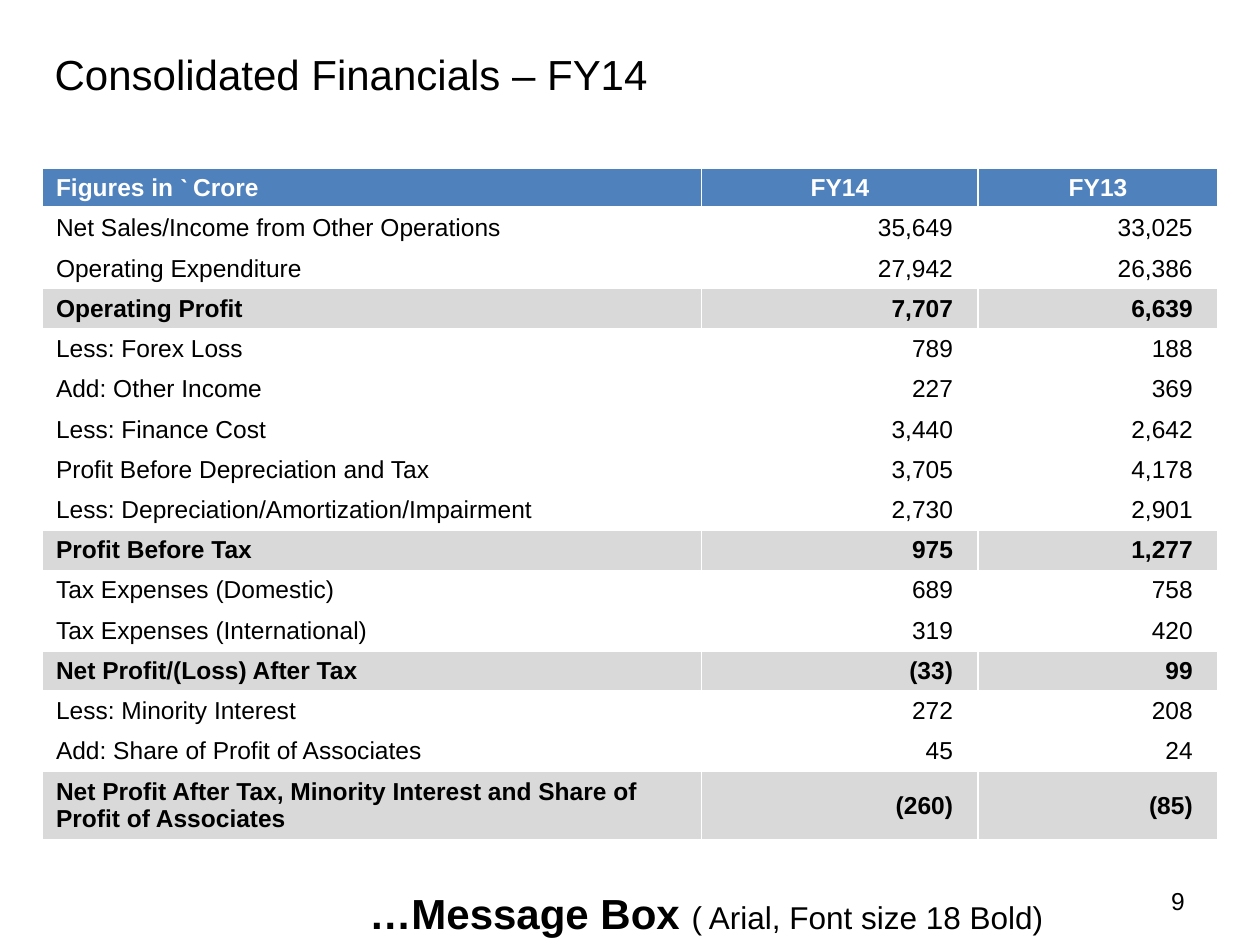
from dataclasses import dataclass
from pptx import Presentation
from pptx.dml.color import RGBColor
from pptx.enum.text import MSO_ANCHOR, PP_ALIGN
from pptx.oxml import parse_xml
from pptx.oxml.ns import nsdecls
from pptx.util import Pt

BLACK = "000000"
WHITE = "FFFFFF"
HEADER_BLUE = "4F81BD"
TOTAL_GREY = "D9D9D9"
COLUMN_WIDTHS = (377, 158, 137)
ROW_HEIGHT = 23
LAST_ROW_HEIGHT = 39


@dataclass
class Span:
    text: str
    size: float
    bold: bool = False
    font: str = "Arial"


@dataclass
class Line:
    label: str
    current: str
    previous: str
    total: bool = False


LINES = [
    Line("Net Sales/Income from Other Operations", "35,649", "33,025"),
    Line("Operating Expenditure", "27,942", "26,386"),
    Line("Operating Profit", "7,707", "6,639", True),
    Line("Less: Forex Loss", "789", "188"),
    Line("Add: Other Income", "227", "369"),
    Line("Less: Finance Cost", "3,440", "2,642"),
    Line("Profit Before Depreciation and Tax", "3,705", "4,178"),
    Line("Less: Depreciation/Amortization/Impairment", "2,730", "2,901"),
    Line("Profit Before Tax", "975", "1,277", True),
    Line("Tax Expenses (Domestic)", "689", "758"),
    Line("Tax Expenses (International)", "319", "420"),
    Line("Net Profit/(Loss) After Tax", "(33)", "99", True),
    Line("Less: Minority Interest", "272", "208"),
    Line("Add: Share of Profit of Associates", "45", "24"),
    Line("Net Profit After Tax, Minority Interest and Share of Profit of Associates",
         "(260)", "(85)", True),
]


def color(value: str) -> RGBColor:
    return RGBColor.from_string(value)


def style_font(font, span: Span, hue: str) -> None:
    font.name = span.font
    font.size = Pt(span.size)
    font.bold = span.bold
    font.color.rgb = color(hue)


def write(frame, spans: list[Span], hue: str = BLACK, align=PP_ALIGN.LEFT) -> None:
    para = frame.paragraphs[0]
    para.alignment = align
    for span in spans:
        run = para.add_run()
        run.text = span.text
        if len(spans) > 1:
            style_font(run.font, span, hue)
    if len(spans) == 1:
        style_font(para.font, spans[0], hue)


def add_text(page, left: float, top: float, width: float, height: float,
             spans: list[Span], align=PP_ALIGN.LEFT, anchor=MSO_ANCHOR.TOP) -> None:
    box = page.shapes.add_textbox(Pt(left), Pt(top), Pt(width), Pt(height))
    box.text_frame.word_wrap = True
    box.text_frame.vertical_anchor = anchor
    write(box.text_frame, spans, align=align)


def set_borders(cell, bottom: float) -> None:
    properties = cell._tc.get_or_add_tcPr()
    widths = {"lnL": 1, "lnR": 1, "lnT": 1, "lnB": bottom}
    for index, (side, width) in enumerate(widths.items()):
        properties.insert(index, parse_xml(
            f'<a:{side} {nsdecls("a")} w="{Pt(width)}"><a:solidFill>'
            f'<a:srgbClr val="{WHITE}"/></a:solidFill></a:{side}>'))


def fill_cell(cell, spans: list[Span], hue: str, fill: str | None, align,
              right_margin: float = 8, bottom: float = 1) -> None:
    cell.vertical_anchor = MSO_ANCHOR.MIDDLE
    cell.margin_left, cell.margin_right = Pt(8), Pt(right_margin)
    cell.margin_top = cell.margin_bottom = Pt(0)
    if fill:
        cell.fill.solid()
        cell.fill.fore_color.rgb = color(fill)
    else:
        cell.fill.background()
    set_borders(cell, bottom)
    write(cell.text_frame, spans, hue, align)


def add_financials(page) -> None:
    rows = len(LINES) + 1
    height = ROW_HEIGHT * len(LINES) + LAST_ROW_HEIGHT
    table = page.shapes.add_table(rows, len(COLUMN_WIDTHS), Pt(24), Pt(96),
                                  Pt(sum(COLUMN_WIDTHS)), Pt(height)).table
    for column, width in zip(table.columns, COLUMN_WIDTHS):
        column.width = Pt(width)
    for row in table.rows:
        row.height = Pt(ROW_HEIGHT)
    table.rows[rows - 1].height = Pt(LAST_ROW_HEIGHT)

    headings = [
        [Span("Figures in ", 14, True), Span("` ", 14, True, "Calibri"), Span("Crore", 14, True)],
        [Span("FY14", 14, True)],
        [Span("FY13", 14, True)],
    ]
    for column, spans in enumerate(headings):
        align = PP_ALIGN.CENTER if column else PP_ALIGN.LEFT
        fill_cell(table.cell(0, column), spans, WHITE, HEADER_BLUE, align, bottom=3)

    for row, line in enumerate(LINES, start=1):
        fill = TOTAL_GREY if line.total else None
        for column, text in enumerate((line.label, line.current, line.previous)):
            align, margin = (PP_ALIGN.RIGHT, 14.4) if column else (PP_ALIGN.LEFT, 8)
            fill_cell(table.cell(row, column), [Span(text, 14, line.total)],
                      BLACK, fill, align, margin)


def main() -> None:
    deck = Presentation()
    deck.slide_width, deck.slide_height = Pt(720), Pt(540)
    page = deck.slides.add_slide(deck.slide_layouts[5])

    title = page.shapes.title
    title.left, title.top, title.width, title.height = Pt(24), Pt(12), Pt(618), Pt(60)
    title.text_frame.vertical_anchor = MSO_ANCHOR.MIDDLE
    write(title.text_frame, [Span("Consolidated Financials – FY14", 24)])

    add_text(page, 204, 503.5, 480, 36.5,
             [Span("…Message Box ", 24, True), Span("( Arial, Font size 18 Bold)", 18)])
    add_text(page, 516, 500.5, 168, 28.75, [Span("9", 14)],
             PP_ALIGN.RIGHT, MSO_ANCHOR.MIDDLE)
    add_financials(page)
    deck.save("out.pptx")


if __name__ == "__main__":
    main()
